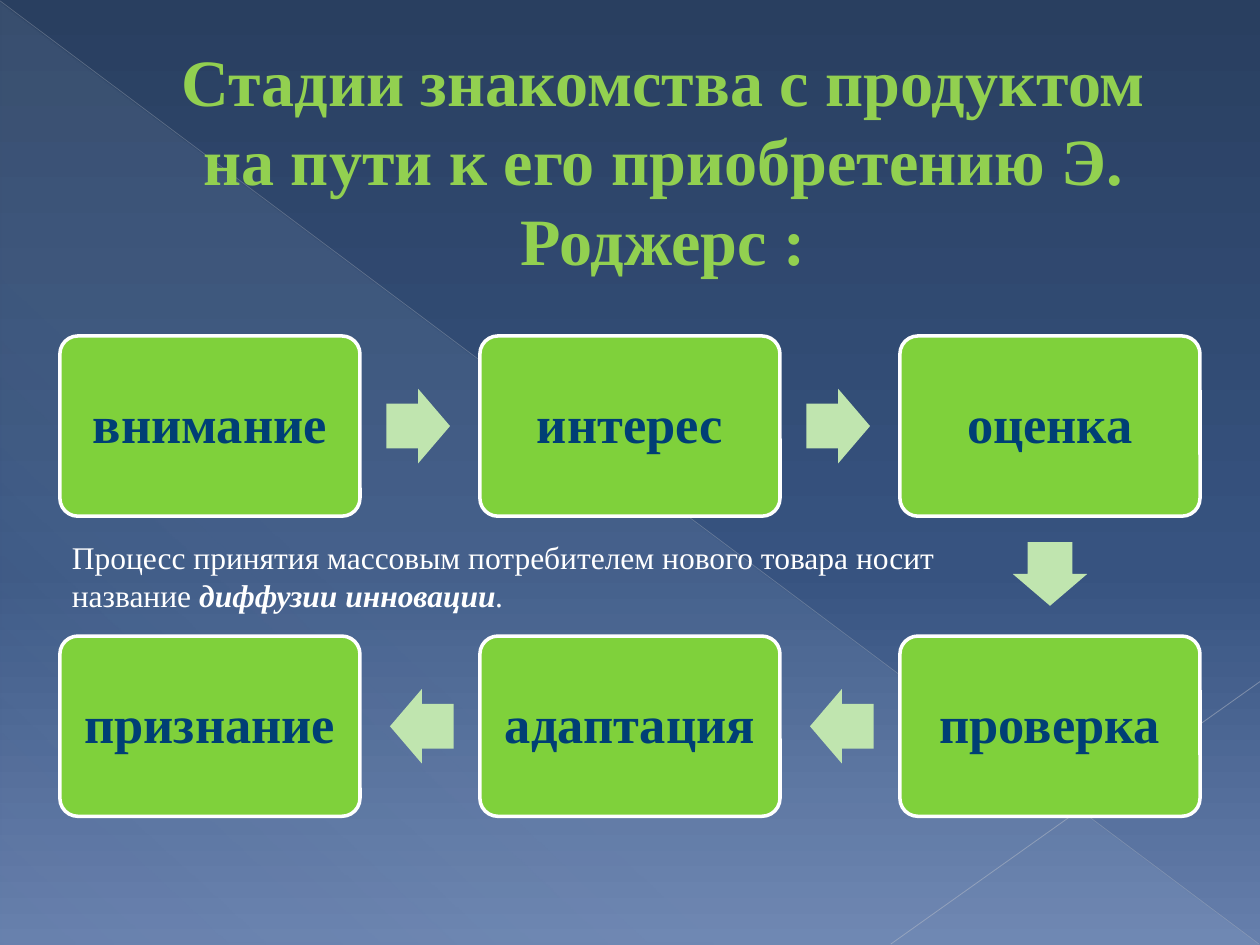
from dataclasses import dataclass

from lxml import etree
from pptx import Presentation
from pptx.dml.color import RGBColor
from pptx.enum import shapes, text
from pptx.oxml import parse_xml
from pptx.oxml.ns import qn
from pptx.util import Pt

NS = 'xmlns:a="http://schemas.openxmlformats.org/drawingml/2006/main"'
SHAPE = shapes.MSO_SHAPE


@dataclass(frozen=True)
class Theme:
    font: str = "Times New Roman"
    title: str = "92D050"
    edge: str = "589129"
    box: str = "7FD13B"
    arrow: str = "C0E5AF"
    label: str = "003F75"
    white: str = "FFFFFF"
    glow: str = "D6ECFF"
    rise: str = "B7BCC5"
    fall: str = "BFC3CB"
    sky: tuple = ((0, "293F60", 100), (60, "375380", 100), (100, "667FAC", 100))
    big: float = 37.8
    mid: float = 30
    small: float = 18


def shade(stops, angle):
    """Gradient fill from (position, colour, opacity) stops in percent."""
    marks = "".join(
        f'<a:gs pos="{pos * 1000}"><a:srgbClr val="{hue}">'
        f'<a:alpha val="{alpha * 1000}"/></a:srgbClr></a:gs>'
        for pos, hue, alpha in stops)
    return parse_xml(f'<a:gradFill {NS} rotWithShape="1"><a:gsLst>{marks}</a:gsLst>'
                     f'<a:lin ang="{angle * 60000}" scaled="0"/></a:gradFill>')


class Deck:
    def __init__(self, theme, width, height):
        self.theme = theme
        self.prs = Presentation()
        self.prs.slide_width, self.prs.slide_height = Pt(width), Pt(height)
        self.slide = self.prs.slides.add_slide(self.prs.slide_layouts[6])

    def back(self, stops, angle):
        self.slide.background.fill.solid()
        old = self.slide.element.find(".//" + qn("p:bgPr")).find(qn("a:solidFill"))
        old.getparent().replace(old, shade(stops, angle))

    def shape(self, kind, x, y, w, h, fill, line=None, turn=0, adj=()):
        item = self.slide.shapes.add_shape(kind, Pt(x), Pt(y), Pt(w), Pt(h))
        item.shadow.inherit = False
        item.rotation = turn
        for i, val in enumerate(adj):
            item.adjustments[i] = val
        item.fill.solid()
        item.fill.fore_color.rgb = RGBColor.from_string(fill)
        if line:
            item.line.color.rgb = RGBColor.from_string(line)
            item.line.width = Pt(2)
        else:
            item.line.fill.background()
        return item

    def wedge(self, x, y, w, h, stops, angle):
        item = self.shape(SHAPE.RIGHT_TRIANGLE, x, y, w, h, self.theme.glow)
        old = item.element.spPr.find(qn("a:solidFill"))
        item.element.spPr.replace(old, shade(stops, angle))

    def line(self, x1, y1, x2, y2, hue, width, alpha):
        item = self.slide.shapes.add_connector(
            shapes.MSO_CONNECTOR.STRAIGHT, Pt(x1), Pt(y1), Pt(x2), Pt(y2))
        item.line.color.rgb = RGBColor.from_string(hue)
        item.line.width = Pt(width)
        tone = item.element.spPr.find(".//" + qn("a:srgbClr"))
        etree.SubElement(tone, qn("a:alpha")).set("val", str(alpha * 1000))
        etree.SubElement(item.element.spPr, qn("a:effectLst"))

    def put(self, item, parts, size, hue, align, anchor, pad=None):
        """Fill a shape with one paragraph of (words, style) parts."""
        frame = item.text_frame
        frame.word_wrap, frame.vertical_anchor = True, anchor
        for side in ("left", "right", "top", "bottom") if pad else ():
            setattr(frame, "margin_" + side, Pt(pad))
        para = frame.paragraphs[0]
        para.alignment = align
        for words, style in parts:
            run = para.add_run()
            run.text = words
            run.font.color.rgb = RGBColor.from_string(hue)
            for key, val in {"name": self.theme.font, "size": Pt(size), **style}.items():
                setattr(run.font, key, val)
        return para

    def label(self, x, y, w, h, parts, size, hue,
              align=text.PP_ALIGN.LEFT, anchor=text.MSO_ANCHOR.TOP):
        item = self.slide.shapes.add_textbox(Pt(x), Pt(y), Pt(w), Pt(h))
        return self.put(item, parts, size, hue, align, anchor)

    def title(self, x, y, w, h, words, indent):
        para = self.label(x, y, w, h, [(words, {"bold": True})], self.theme.big,
                          self.theme.title, text.PP_ALIGN.CENTER, text.MSO_ANCHOR.MIDDLE)
        para._p.get_or_add_pPr().set("marL", str(Pt(indent)))
        para._p.find(".//" + qn("a:rPr")).insert(0, parse_xml(
            f'<a:ln {NS} w="6350"><a:solidFill><a:srgbClr val="{self.theme.edge}"/>'
            '</a:solidFill></a:ln>'))

    def stage(self, mid, row, w, h, word):
        item = self.shape(SHAPE.ROUNDED_RECTANGLE, mid - w / 2, row - h / 2, w, h,
                          self.theme.box, self.theme.white, adj=[0.1])
        para = self.put(item, [(word, {"bold": True})], self.theme.mid, self.theme.label,
                        text.PP_ALIGN.CENTER, text.MSO_ANCHOR.MIDDLE, 8.6)
        para.line_spacing = 0.9

    def arrow(self, mid, row, turn):
        w, h = 36.3, 42.5
        self.shape(SHAPE.RIGHT_ARROW, mid - w / 2, row - h / 2, w, h,
                   self.theme.arrow, turn=turn, adj=[0.6, 0.5])


def main():
    theme = Theme()
    deck = Deck(theme, 720, 540)
    deck.back(theme.sky, 90)
    deck.wedge(0.5, 1.5, 719, 538.5,
               [(0, theme.glow, 10), (70, theme.glow, 8), (100, theme.glow, 1)], 133)
    deck.line(0, 0.5, 719.5, 539.5, theme.rise, 0.39, 35)
    deck.line(720, 389.5, 509, 539.5, theme.fall, 0.47, 45)
    deck.title(36, 36, 648, 110,
               "Стадии знакомства с продуктом на пути к его приобретению Э. Роджерс :", 38)

    cols, rows = (120, 360, 600), (243.5, 415)
    stages = (("внимание", "интерес", "оценка"), ("признание", "адаптация", "проверка"))
    for row, words in zip(rows, stages):
        for mid, word in zip(cols, words):
            deck.stage(mid, row, 171.5, 103, word)
    for left, right in zip(cols, cols[1:]):
        gap = (left + right) / 2
        deck.arrow(gap - 1, rows[0], 0)
        deck.arrow(gap + 1, rows[1], 180)
    deck.arrow(cols[-1], 328, 90)

    deck.label(34, 304, 541.5, 51, [
        ("Процесс принятия массовым потребителем нового товара носит название ", {}),
        ("диффузии инновации", {"bold": True, "italic": True}),
        (".", {"italic": True})], theme.small, theme.white)
    deck.prs.save("out.pptx")


if __name__ == "__main__":
    main()
